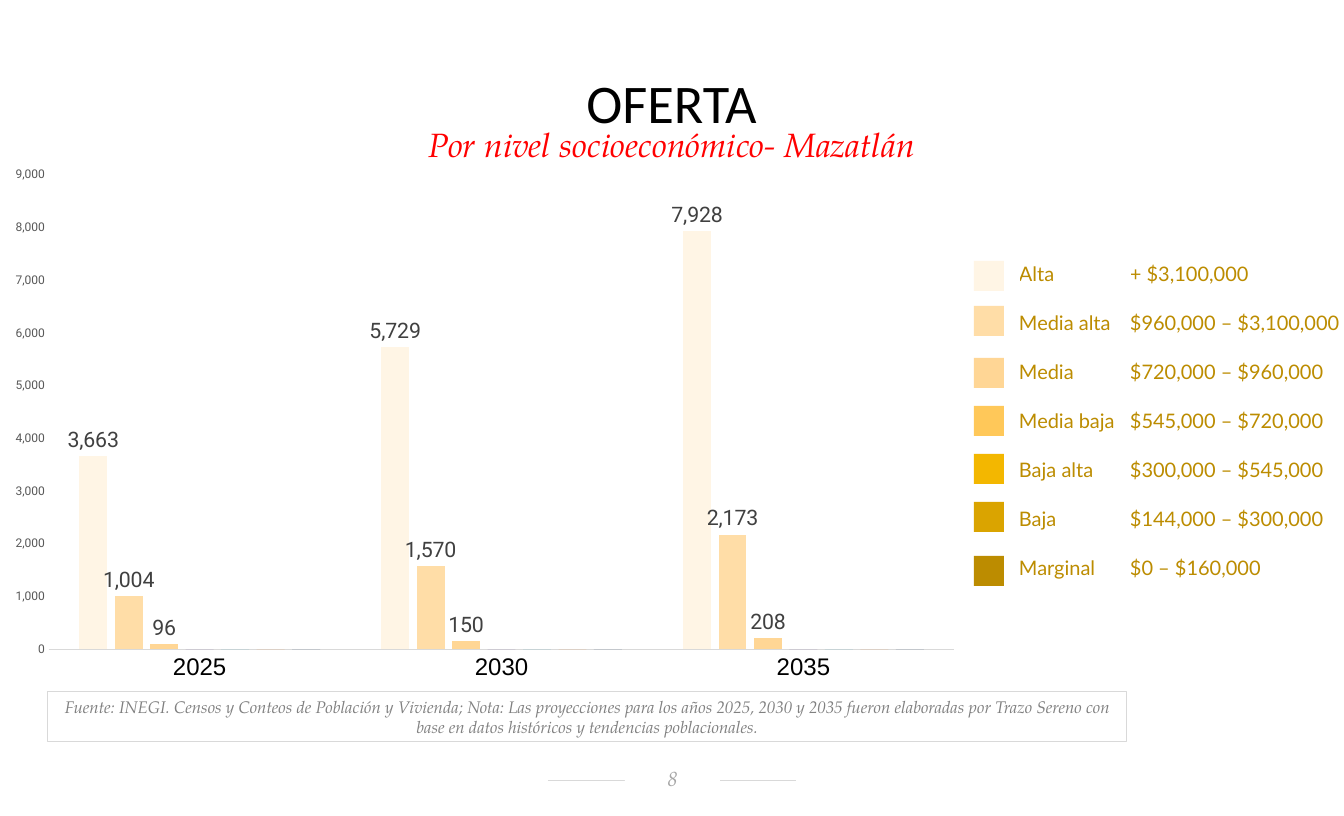
import lxml.etree
import pptx
import pptx.chart.data
import pptx.dml.color
import pptx.enum.chart
import pptx.enum.shapes
import pptx.enum.text
import pptx.oxml
import pptx.oxml.ns
import pptx.util

PX = 9525


class Theme:
    serif = "TeX Gyre Pagella"
    title_font = "Calibri"
    legend_font = "Lato"
    category_font = "Arial"
    number_font = "Roboto"
    white = "FFFFFF"
    black = "000000"
    red = "FF0000"
    rule = "D9D9D9"
    page_grey = "A6A6A6"
    source_grey = "808080"
    axis_grey = "595959"
    label_grey = "404040"
    gold = "BC8C00"
    unused_series = ["8064A2", "4BACC6", "F79646", "2C4D75"]
    title_size = 40.8
    subtitle_size = 25.2
    category_size = 18
    label_size = 16
    page_size = 15.4
    legend_size = 15
    source_size = 12.6
    chart_size = 10
    axis_size = 9
    rule_width = 0.75


def box(*lengths):
    return [length * PX for length in lengths]


def style_font(font, name, size, color, italic=False):
    font.name = name
    font.size = pptx.util.Pt(size)
    font.color.rgb = pptx.dml.color.RGBColor.from_string(color)
    font.italic = italic
    font.bold = False


rgb = pptx.dml.color.RGBColor.from_string
rectangle = pptx.enum.shapes.MSO_SHAPE.RECTANGLE
center = pptx.enum.text.PP_ALIGN.CENTER
anchor = pptx.enum.text.MSO_ANCHOR

presentation = pptx.Presentation()
presentation.slide_width, presentation.slide_height = box(1344, 816)
slide = presentation.slides.add_slide(presentation.slide_layouts[0])
shapes = slide.shapes

headings = [
    (shapes.title, "OFERTA", box(47, 81, 1249, 58), 6,
     Theme.title_font, Theme.title_size, Theme.black, False, 0.7),
    (slide.placeholders[1], "Por nivel socioeconómico- Mazatlán", box(0, 119, 1344, 51), 5,
     Theme.serif, Theme.subtitle_size, Theme.red, True, 1),
]
for shape, text, place, inset, name, size, color, italic, spacing in headings:
    shape.left, shape.top, shape.width, shape.height = place
    text_frame = shape.text_frame
    text_frame.text = text
    text_frame.auto_size = pptx.enum.text.MSO_AUTO_SIZE.NONE
    text_frame.vertical_anchor = anchor.TOP
    text_frame.margin_top = text_frame.margin_bottom = inset * PX
    paragraph = text_frame.paragraphs[0]
    paragraph.alignment = center
    paragraph.line_spacing = spacing
    paragraph.space_before = pptx.util.Pt(0)
    style_font(paragraph.runs[0].font, name, size, color, italic)

page_rule = shapes.add_connector(
    pptx.enum.shapes.MSO_CONNECTOR.STRAIGHT, *box(548, 781, 796, 781))
page_rule.line.color.rgb = rgb(Theme.rule)
page_rule.line.width = pptx.util.Pt(Theme.rule_width)
lxml.etree.SubElement(
    page_rule._element.spPr, pptx.oxml.ns.qn("a:effectLst"))

page_number = shapes.add_shape(rectangle, *box(625, 766, 95, 28))
page_number.fill.solid()
page_number.fill.fore_color.rgb = rgb(Theme.white)
page_number.line.fill.background()
page_number.text_frame.margin_top = 2 * PX

source_note = shapes.add_shape(rectangle, *box(47, 691, 1080, 51))
source_note.fill.background()
source_note.line.color.rgb = rgb(Theme.rule)
source_note.line.width = pptx.util.Pt(Theme.rule_width)

source_text = (
    "Fuente: INEGI. Censos y Conteos de Población y Vivienda; Nota: Las proyecciones "
    "para los años 2025, 2030 y 2035 fueron elaboradas por Trazo Sereno con base en "
    "datos históricos y tendencias poblacionales."
)
for shape, text, size, color in [
    (page_number, "8", Theme.page_size, Theme.page_grey),
    (source_note, source_text, Theme.source_size, Theme.source_grey),
]:
    shape.shadow.inherit = False
    shape.text_frame.word_wrap = True
    shape.text_frame.vertical_anchor = anchor.MIDDLE
    shape.text_frame.text = text
    paragraph = shape.text_frame.paragraphs[0]
    paragraph.alignment = center
    style_font(paragraph.runs[0].font, Theme.serif, size, color, True)

levels = [
    ("Alta", "+ $3,100,000", "FFF5E5", 261),
    ("Media alta", "$960,000 – $3,100,000", "FFDDA7", 306),
    ("Media", "$720,000 – $960,000", "FFD695", 358),
    ("Media baja", "$545,000 – $720,000", "FFC859", 406),
    ("Baja alta", "$300,000 – $545,000", "F3B700", 454),
    ("Baja", "$144,000 – $300,000", "DAA400", 502),
    ("Marginal", "$0 – $160,000", "BC8C00", 556),
]
table = shapes.add_table(len(levels), 2, *box(1019, 249, 325, 343)).table
table.first_row = False
table.horz_banding = False
for column, width in zip(table.columns, box(111, 214)):
    column.width = width
for row, (level, price, color, top) in enumerate(levels):
    table.rows[row].height = 49 * PX
    for column, text in enumerate([level, price]):
        cell = table.cell(row, column)
        cell.fill.background()
        cell.margin_left = cell.margin_right = cell.margin_top = cell.margin_bottom = 0
        cell.vertical_anchor = anchor.MIDDLE
        cell.text_frame.text = text
        style_font(cell.text_frame.paragraphs[0].runs[0].font,
                   Theme.legend_font, Theme.legend_size, Theme.gold)
    swatch = shapes.add_shape(rectangle, *box(974, top, 30, 30))
    swatch.shadow.inherit = False
    swatch.fill.solid()
    swatch.fill.fore_color.rgb = rgb(color)
    swatch.line.fill.background()

supply = [(3663, 5729, 7928), (1004, 1570, 2173), (96, 150, 208)] + [(0, 0, 0)] * 4
series_colors = [level[2] for level in levels[:3]] + Theme.unused_series
chart_data = pptx.chart.data.CategoryChartData(number_format="#,##0")
chart_data.categories = ["2025", "2030", "2035"]
for number, values in enumerate(supply, start=1):
    chart_data.add_series(f"Series {number}", values)
chart = shapes.add_chart(
    pptx.enum.chart.XL_CHART_TYPE.COLUMN_CLUSTERED, *box(0, 159, 974, 533), chart_data).chart
chart.has_legend = False
chart.has_title = False
style_font(chart.font, Theme.title_font, Theme.chart_size, Theme.black)

plot = chart.plots[0]
plot.gap_width = 219
plot.overlap = -27
plot.vary_by_categories = False
for series, color in zip(plot.series, series_colors):
    series.format.fill.solid()
    series.format.fill.fore_color.rgb = rgb(color)
    if any(series.values):
        labels = series.data_labels
        labels.show_value = True
        labels.number_format = "#,##0"
        labels.number_format_is_linked = False
        labels.position = pptx.enum.chart.XL_LABEL_POSITION.OUTSIDE_END
        style_font(labels.font, Theme.number_font, Theme.label_size, Theme.label_grey)

category_axis = chart.category_axis
category_axis.format.line.color.rgb = rgb(Theme.rule)
category_axis.format.line.width = pptx.util.Pt(Theme.rule_width)
style_font(category_axis.tick_labels.font,
           Theme.category_font, Theme.category_size, Theme.black)
value_axis = chart.value_axis
value_axis.minimum_scale = 0
value_axis.maximum_scale = 9000
value_axis.major_unit = 1000
value_axis.format.line.fill.background()
value_axis.tick_labels.number_format = "#,##0"
value_axis.tick_labels.number_format_is_linked = False
style_font(value_axis.tick_labels.font,
           Theme.number_font, Theme.axis_size, Theme.axis_grey)
for axis in (category_axis, value_axis):
    axis.has_major_gridlines = False
    axis.major_tick_mark = pptx.enum.chart.XL_TICK_MARK.NONE

plot_area = chart._chartSpace.chart.plotArea
for layout in plot_area.findall(pptx.oxml.ns.qn("c:layout")):
    plot_area.remove(layout)
plot_area.insert(0, pptx.oxml.parse_xml(
    f'<c:layout {pptx.oxml.ns.nsdecls("c")}><c:manualLayout>'
    '<c:layoutTarget val="inner"/><c:xMode val="edge"/><c:yMode val="edge"/>'
    '<c:x val="0.05"/><c:y val="0.03"/><c:w val="0.93"/><c:h val="0.89"/>'
    '</c:manualLayout></c:layout>'))

presentation.save("out.pptx")
